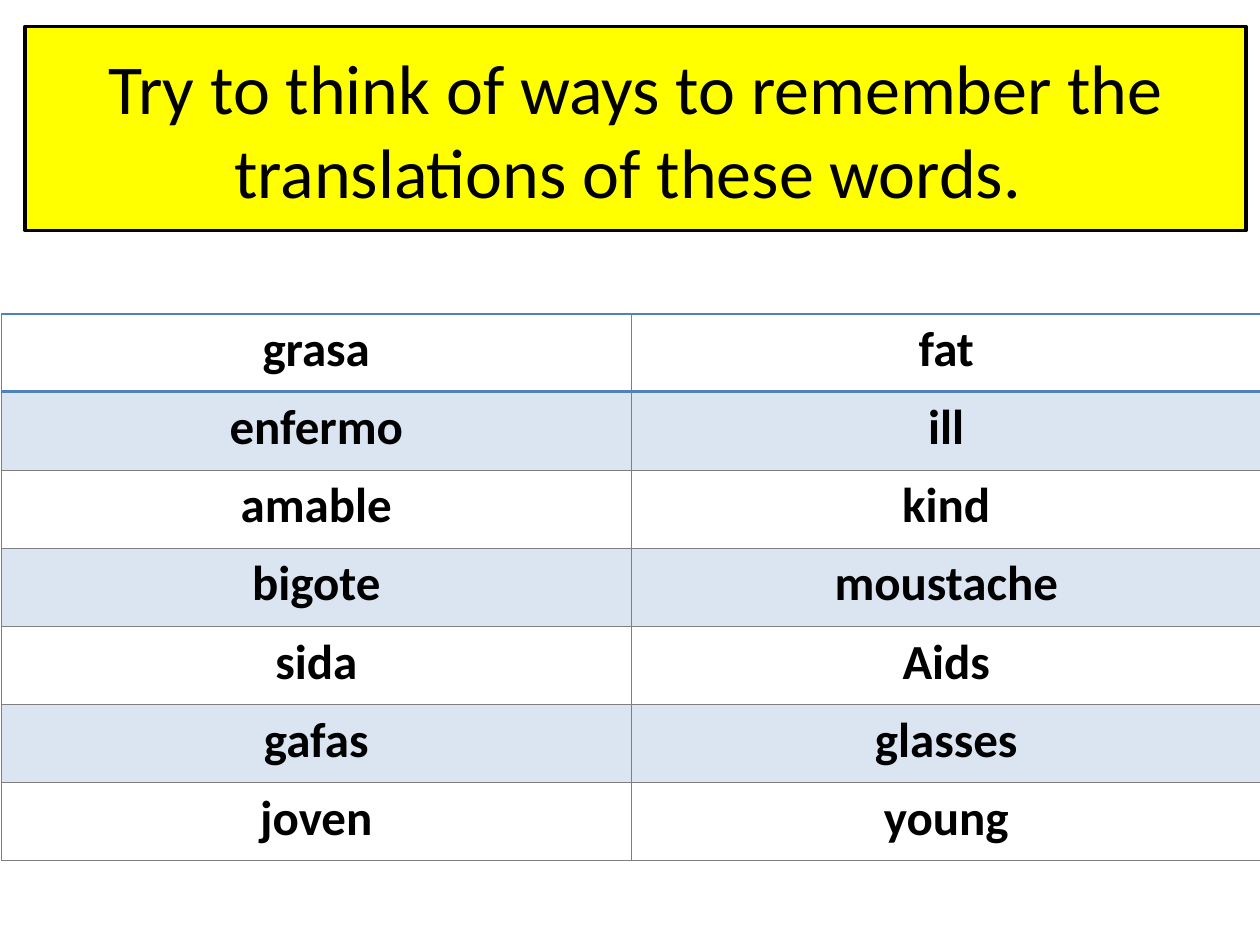
"""Build a vocabulary slide with a title banner and a two-column word table."""
from lxml.etree import SubElement
from pptx import Presentation
from pptx.dml.color import RGBColor
from pptx.enum.shapes import MSO_SHAPE
from pptx.enum.text import MSO_ANCHOR, PP_ALIGN
from pptx.oxml.ns import qn
from pptx.util import Inches, Pt

TITLE = "Try to think of ways to remember the translations of these words. "
WORDS = [
    ("grasa", "fat"),
    ("enfermo", "ill"),
    ("amable", "kind"),
    ("bigote", "moustache"),
    ("sida", "Aids"),
    ("gafas", "glasses"),
    ("joven", "young"),
]
BLACK = RGBColor(0x00, 0x00, 0x00)
WHITE = RGBColor(0xFF, 0xFF, 0xFF)
YELLOW = RGBColor(0xFF, 0xFF, 0x00)
BLUE = RGBColor(0x4F, 0x81, 0xBD)
PALE_BLUE = RGBColor(0xDB, 0xE5, 0xF1)
GREY = RGBColor(0x7F, 0x7F, 0x7F)
TITLE_FONT = {"name": "Calibri", "size": Pt(40), "bold": False}
WORD_FONT = {"name": "Calibri", "size": Pt(28), "bold": True}
COL_WIDTH, ROW_HEIGHT = 5, 0.62
THIN, TOP_RULE, HEADER_RULE = (GREY, 0.5), (BLUE, 1), (BLUE, 2)


def write(tf, text, font):
    p = tf.paragraphs[0]
    p.alignment = PP_ALIGN.CENTER
    r = p.add_run()
    r.text = text
    for name, value in font.items():
        setattr(r.font, name, value)
    r.font.color.rgb = BLACK


def set_border(cell, side, color, width):
    ln = SubElement(cell._tc.get_or_add_tcPr(), qn(f"a:ln{side}"), w=str(Pt(width)))
    fill = SubElement(ln, qn("a:solidFill"))
    SubElement(fill, qn("a:srgbClr"), val=str(color))


def add_banner(s):
    sp = s.shapes.add_shape(
        MSO_SHAPE.RECTANGLE, Inches(0.2), Inches(0.21), Inches(9.69), Inches(1.62)
    )
    sp.shadow.inherit = False
    sp.fill.solid()
    sp.fill.fore_color.rgb = YELLOW
    sp.line.color.rgb = BLACK
    sp.line.width = Pt(2)
    tf = sp.text_frame
    tf.word_wrap = True
    tf.vertical_anchor = MSO_ANCHOR.MIDDLE
    write(tf, TITLE, TITLE_FONT)


def add_words(s):
    rows, cols = len(WORDS), len(WORDS[0])
    table = s.shapes.add_table(
        rows, cols, Inches(0.01), Inches(2.49),
        Inches(cols * COL_WIDTH), Inches(rows * ROW_HEIGHT),
    ).table
    for i, pair in enumerate(WORDS):
        top = {0: TOP_RULE, 1: HEADER_RULE}.get(i, THIN)
        bottom = HEADER_RULE if i == 0 else THIN
        for j, word in enumerate(pair):
            cell = table.cell(i, j)
            for side, rule in zip("LRTB", (THIN, THIN, top, bottom)):
                set_border(cell, side, *rule)
            cell.fill.solid()
            cell.fill.fore_color.rgb = PALE_BLUE if i % 2 else WHITE
            write(cell.text_frame, word, WORD_FONT)


def main():
    prs = Presentation()
    prs.slide_width, prs.slide_height = Inches(10), Inches(7.5)
    s = prs.slides.add_slide(prs.slide_layouts[6])
    add_banner(s)
    add_words(s)
    prs.save("out.pptx")


if __name__ == "__main__":
    main()
